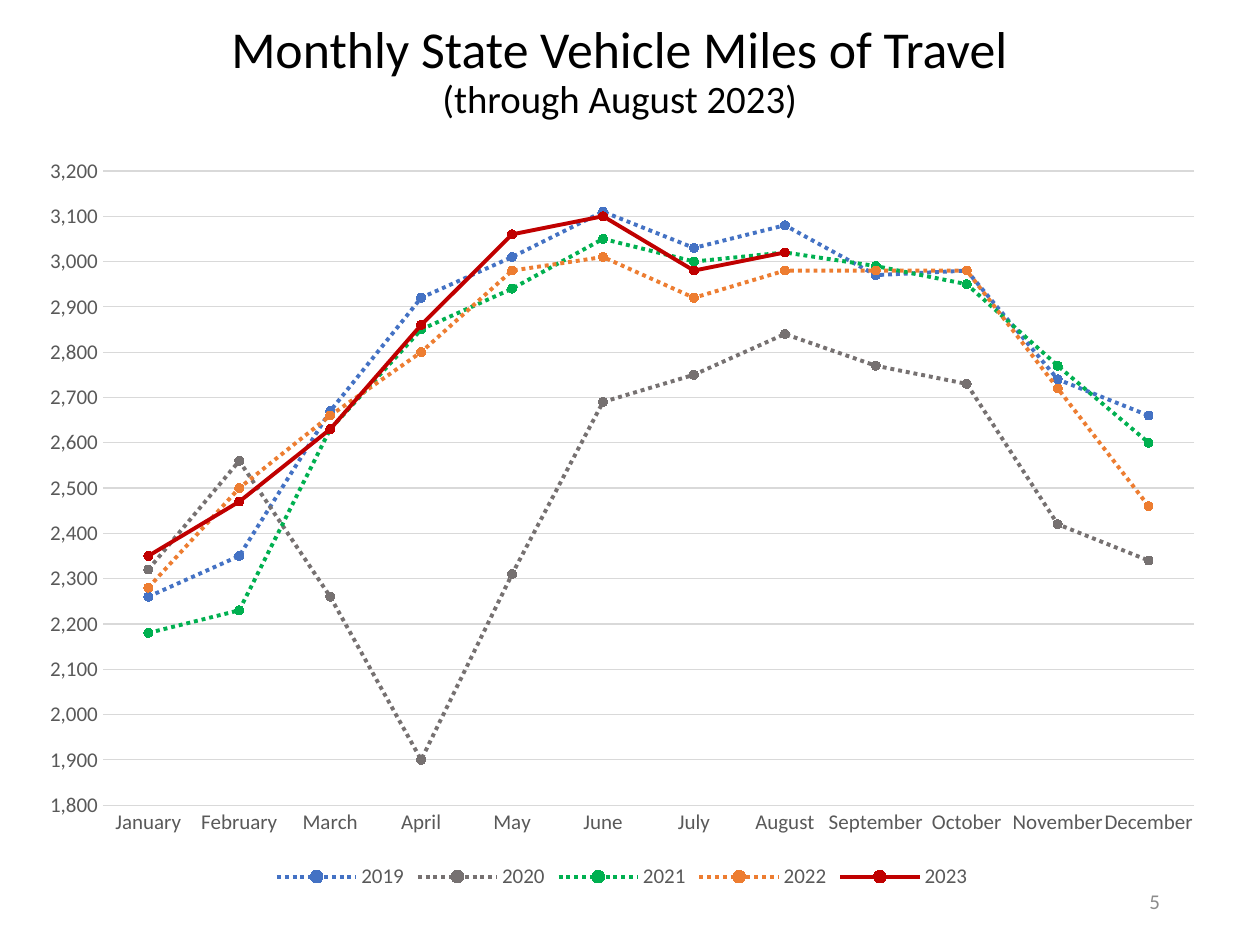
from pptx import Presentation
from pptx.chart.data import CategoryChartData
from pptx.dml.color import RGBColor
from pptx.enum.chart import (XL_CHART_TYPE, XL_LEGEND_POSITION,
                             XL_MARKER_STYLE, XL_TICK_MARK)
from pptx.enum.dml import MSO_LINE
from pptx.enum.text import MSO_ANCHOR, PP_ALIGN
from pptx.util import Pt

LINE = XL_CHART_TYPE.LINE_MARKERS
BOTTOM = XL_LEGEND_POSITION.BOTTOM
CIRCLE = XL_MARKER_STYLE.CIRCLE
NO_TICK = XL_TICK_MARK.NONE
DOTS = MSO_LINE.ROUND_DOT  # written to the file as sysDot
MIDDLE, LOW = MSO_ANCHOR.MIDDLE, MSO_ANCHOR.BOTTOM
CENTER, RIGHT = PP_ALIGN.CENTER, PP_ALIGN.RIGHT

FACE = "Calibri"
BLACK, DARK, GRAY, PALE = "000000", "595959", "8C8C8C", "D9D9D9"

MONTHS = ["January", "February", "March", "April", "May", "June", "July",
          "August", "September", "October", "November", "December"]

# Year, colour, dash, monthly miles
YEARS = [
    ("2019", "4472C4", DOTS, [2260, 2350, 2670, 2920, 3010, 3110,
                              3030, 3080, 2970, 2980, 2740, 2660]),
    ("2020", "767171", DOTS, [2320, 2560, 2260, 1900, 2310, 2690,
                              2750, 2840, 2770, 2730, 2420, 2340]),
    ("2021", "00B050", DOTS, [2180, 2230, 2630, 2850, 2940, 3050,
                              3000, 3020, 2990, 2950, 2770, 2600]),
    ("2022", "ED7D31", DOTS, [2280, 2500, 2660, 2800, 2980, 3010,
                              2920, 2980, 2980, 2980, 2720, 2460]),
    ("2023", "C00000", None, [2350, 2470, 2630, 2860, 3060, 3100,
                              2980, 3020] + [None] * 4),
]


def rgb(code):
    return RGBColor.from_string(code)


def set_font(font, size, color):
    font.name = FACE
    font.size = Pt(size)
    font.color.rgb = rgb(color)


def set_line(line, color, width):
    line.color.rgb = rgb(color)
    line.width = Pt(width)


def add_text(slide, box, lines, color=BLACK, align=CENTER, anchor=MIDDLE,
             space=1.0):
    """Add a text box; lines holds pairs of text and size."""
    frame = slide.shapes.add_textbox(*map(Pt, box)).text_frame
    frame.word_wrap = True
    frame.vertical_anchor = anchor
    for i, (text, size) in enumerate(lines):
        para = frame.add_paragraph() if i else frame.paragraphs[0]
        para.alignment = align
        para.line_spacing = space
        run = para.add_run()
        run.text = text
        set_font(run.font, size, color)


def style_axes(chart):
    for axis in (chart.category_axis, chart.value_axis):
        axis.major_tick_mark = axis.minor_tick_mark = NO_TICK
        set_font(axis.tick_labels.font, 12, DARK)
    set_line(chart.category_axis.format.line, PALE, 0.75)

    miles = chart.value_axis
    miles.minimum_scale = 1800
    miles.maximum_scale = 3200
    miles.major_unit = 100
    miles.format.line.fill.background()
    miles.has_major_gridlines = True
    set_line(miles.major_gridlines.format.line, PALE, 0.75)
    miles.tick_labels.number_format = "#,##0"
    miles.tick_labels.number_format_is_linked = False


def style_year(series, color, dash):
    series.smooth = False
    set_line(series.format.line, color, 2.25)
    if dash:
        series.format.line.dash_style = dash
    mark = series.marker
    mark.style = CIRCLE
    mark.size = 5
    mark.format.fill.solid()
    mark.format.fill.fore_color.rgb = rgb(color)
    set_line(mark.format.line, color, 0.75)


def add_lines(slide, box):
    data = CategoryChartData(number_format="#,##0")
    data.categories = MONTHS
    for year, _, _, miles in YEARS:
        data.add_series(year, miles)
    chart = slide.shapes.add_chart(LINE, *map(Pt, box), data).chart
    chart.has_title = False
    set_font(chart.font, 10, BLACK)
    chart.plots[0].vary_by_categories = False
    style_axes(chart)
    for series, (_, color, dash, _) in zip(chart.plots[0].series, YEARS):
        style_year(series, color, dash)

    chart.has_legend = True
    chart.legend.position = BOTTOM
    chart.legend.include_in_layout = False
    set_font(chart.legend.font, 12, DARK)


def main():
    deck = Presentation()
    deck.slide_width, deck.slide_height = Pt(720), Pt(540)
    slide = deck.slides.add_slide(deck.slide_layouts[6])

    # Chart of miles by month
    add_lines(slide, (15, 82, 681, 429))

    # Page number
    add_text(slide, (508, 500.5, 162, 28.75), [("5", 12)],
             color=GRAY, align=RIGHT)

    # Title
    add_text(slide, (44, 6, 620.5, 67),
             [("Monthly State Vehicle Miles of Travel", 29.6),
              ("(through August 2023)", 22.2)], anchor=LOW, space=0.9)

    deck.save("out.pptx")


if __name__ == "__main__":
    main()
